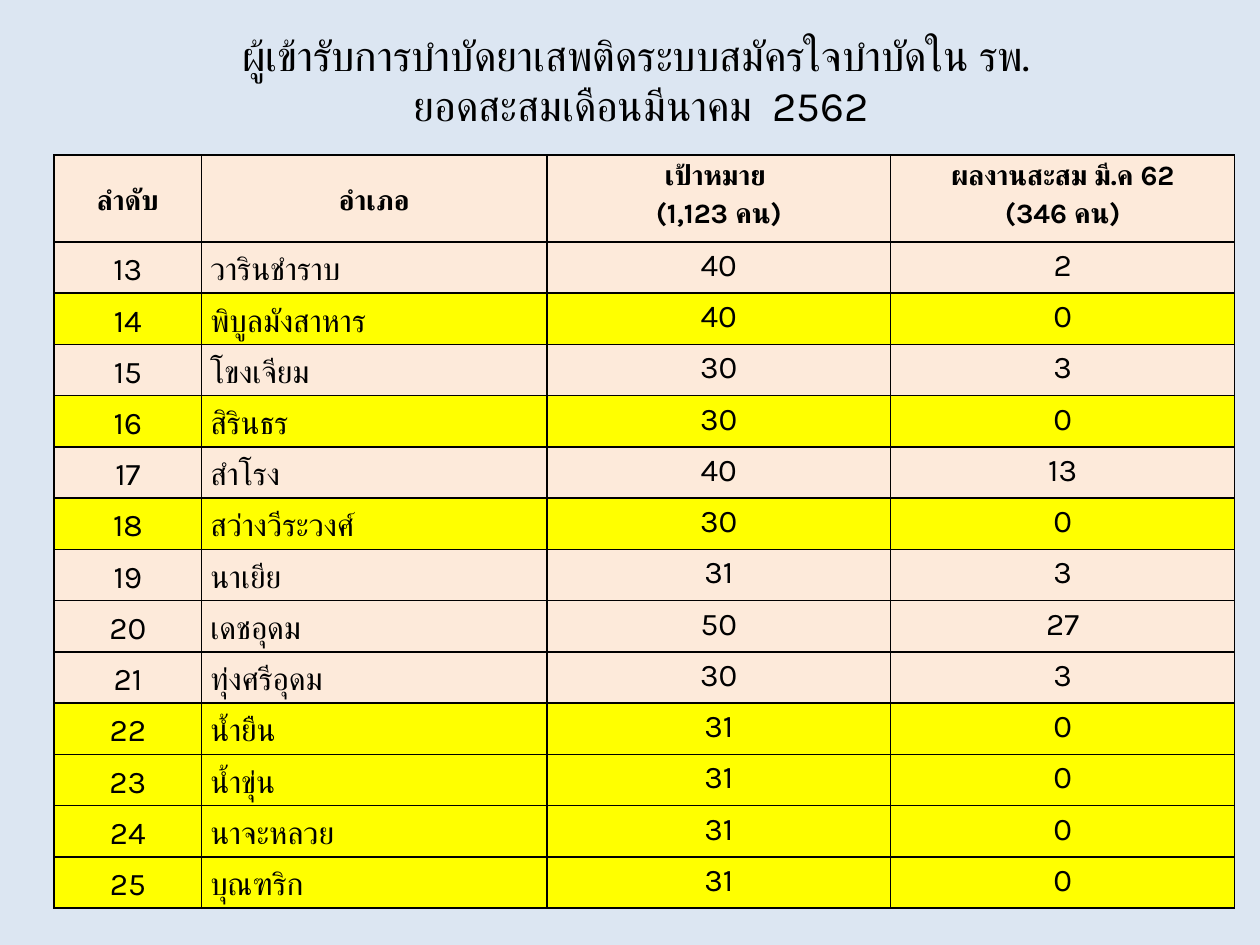
import pptx
import pptx.util
import pptx.dml.color
import pptx.enum.text
import pptx.oxml
import pptx.oxml.ns
import lxml.etree

Inches = pptx.util.Inches
Pt = pptx.util.Pt
Align = pptx.enum.text.PP_ALIGN
Anchor = pptx.enum.text.MSO_ANCHOR

TITLE = "ผู้เข้ารับการบำบัดยาเสพติดระบบสมัครใจบำบัดใน รพ. \vยอดสะสมเดือนมีนาคม  2562"
HEADERS = ["ลำดับ", "อำเภอ", "เป้าหมาย \n(1,123 คน)", "ผลงานสะสม มี.ค 62\n(346 คน)"]
FIRST_NUMBER = 13
DISTRICTS = [
    ("วารินชำราบ", 40, 2),
    ("พิบูลมังสาหาร", 40, 0),
    ("โขงเจียม", 30, 3),
    ("สิรินธร", 30, 0),
    ("สำโรง", 40, 13),
    ("สว่างวีระวงศ์", 30, 0),
    ("นาเยีย", 31, 3),
    ("เดชอุดม", 50, 27),
    ("ทุ่งศรีอุดม", 30, 3),
    ("น้ำยืน", 31, 0),
    ("น้ำขุ่น", 31, 0),
    ("นาจะหลวย", 31, 0),
    ("บุณฑริก", 31, 0),
]

THEME = {
    "font": "Karla",
    "background": "DCE6F2",
    "text": "000000",
    "border": "000000",
    "normal": "FDEADA",
    "no_result": "FFFF00",
    "title_size": 24,
    "header_size": 16,
    "body_size": 18,
}

TABLE_LEFT, TABLE_TOP, TABLE_HEIGHT = 0.43, 1.23, 5.98
COLUMN_WIDTHS = [1.17, 2.74, 2.73, 2.73]
HEADER_HEIGHT = 0.69
ROW_HEIGHT = (TABLE_HEIGHT - HEADER_HEIGHT) / len(DISTRICTS)


def color(name):
    return pptx.dml.color.RGBColor.from_string(THEME[name])


def format_paragraph(paragraph, size, bold=False, align=Align.CENTER):
    paragraph.alignment = align
    font = paragraph.font
    font.size = Pt(size)
    font.bold = bold
    font.name = THEME["font"]
    font.color.rgb = color("text")
    for run in paragraph.runs:
        properties = run._r.get_or_add_rPr()
        complex_font = lxml.etree.SubElement(properties, pptx.oxml.ns.qn("a:cs"))
        complex_font.set("typeface", THEME["font"])


def add_borders(cell):
    properties = cell._tc.get_or_add_tcPr()
    for index, side in enumerate(("lnL", "lnR", "lnT", "lnB")):
        properties.insert(index, pptx.oxml.parse_xml(
            f'<a:{side} {pptx.oxml.ns.nsdecls("a")} w="{Pt(1)}"><a:solidFill>'
            f'<a:srgbClr val="{THEME["border"]}"/></a:solidFill></a:{side}>'))


def fill_cell(cell, text, size, bold, align, anchor, fill):
    cell.text = text
    cell.margin_left = cell.margin_right = Inches(0.07)
    cell.margin_top = cell.margin_bottom = 0
    cell.vertical_anchor = anchor
    cell.fill.solid()
    cell.fill.fore_color.rgb = color(fill)
    for paragraph in cell.text_frame.paragraphs:
        paragraph.line_spacing = 1.15
        format_paragraph(paragraph, size, bold, align)
    add_borders(cell)


def add_title(slide):
    title = slide.shapes.title
    title.left, title.top = Inches(0.59), Inches(0.13)
    title.width, title.height = Inches(9), Inches(1.01)
    title.text_frame.text = TITLE
    title.text_frame.vertical_anchor = Anchor.MIDDLE
    format_paragraph(title.text_frame.paragraphs[0], THEME["title_size"])


def add_district_table(slide):
    rows = [HEADERS] + [
        [str(number), name, str(target), str(result)]
        for number, (name, target, result) in enumerate(DISTRICTS, FIRST_NUMBER)
    ]
    table = slide.shapes.add_table(
        len(rows), len(HEADERS), Inches(TABLE_LEFT), Inches(TABLE_TOP),
        Inches(sum(COLUMN_WIDTHS)), Inches(TABLE_HEIGHT)).table
    for column, width in zip(table.columns, COLUMN_WIDTHS):
        column.width = Inches(width)
    for row_index, values in enumerate(rows):
        header = row_index == 0
        table.rows[row_index].height = Inches(HEADER_HEIGHT if header else ROW_HEIGHT)
        size = THEME["header_size" if header else "body_size"]
        fill = "no_result" if values[-1] == "0" else "normal"
        for column_index, text in enumerate(values):
            align = Align.LEFT if column_index == 1 and not header else Align.CENTER
            anchor = Anchor.MIDDLE if column_index < 2 else Anchor.TOP
            fill_cell(table.cell(row_index, column_index), text, size, header,
                      align, anchor, fill)


def main():
    presentation = pptx.Presentation()
    presentation.slide_width, presentation.slide_height = Inches(10), Inches(7.5)
    slide = presentation.slides.add_slide(presentation.slide_layouts[5])
    slide.background.fill.solid()
    slide.background.fill.fore_color.rgb = color("background")
    add_title(slide)
    add_district_table(slide)
    presentation.save("out.pptx")


if __name__ == "__main__":
    main()
